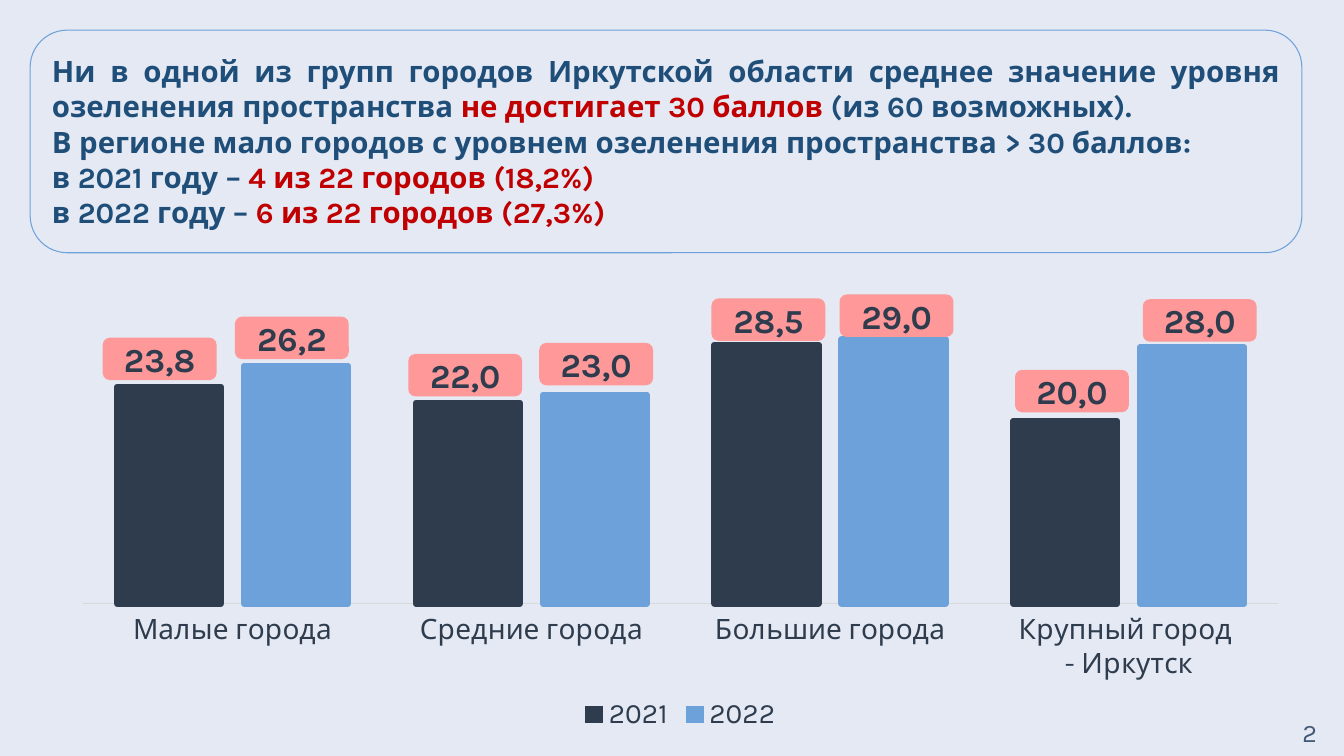
from dataclasses import dataclass

from lxml import etree
from pptx import Presentation
from pptx.chart.data import CategoryChartData
from pptx.dml.color import RGBColor
from pptx.enum.chart import XL_CHART_TYPE, XL_LEGEND_POSITION, XL_TICK_LABEL_POSITION, XL_TICK_MARK
from pptx.enum.shapes import MSO_SHAPE
from pptx.enum.text import MSO_ANCHOR, MSO_AUTO_SIZE, PP_ALIGN
from pptx.oxml.ns import qn
from pptx.util import Cm, Pt

COLUMNS = XL_CHART_TYPE.COLUMN_CLUSTERED
LEGEND_BOTTOM = XL_LEGEND_POSITION.BOTTOM
NO_TICK = XL_TICK_MARK.NONE
LABELS_LOW = XL_TICK_LABEL_POSITION.LOW
ROUNDED = MSO_SHAPE.ROUNDED_RECTANGLE
MIDDLE = MSO_ANCHOR.MIDDLE
FIXED_SIZE = MSO_AUTO_SIZE.NONE
CENTER, JUSTIFY = PP_ALIGN.CENTER, PP_ALIGN.JUSTIFY

FONT = "Karla"
BACKGROUND = RGBColor(0xE4, 0xE9, 0xF4)
DARK = RGBColor(0x2E, 0x3C, 0x4D)
BLUE = RGBColor(0x6D, 0xA1, 0xDA)
NAVY = RGBColor(0x1F, 0x4E, 0x79)
RED = RGBColor(0xC0, 0x00, 0x00)
PINK = RGBColor(0xFF, 0x99, 0x99)
AXIS_GREY = RGBColor(0xD9, 0xD9, 0xD9)
PAGE_GREY = RGBColor(0x43, 0x59, 0x76)


@dataclass(frozen=True)
class Run:
    text: str
    color: RGBColor


@dataclass(frozen=True)
class Series:
    name: str
    values: tuple[int, ...]
    color: RGBColor


@dataclass(frozen=True)
class Score:
    text: str
    left: float
    top: float


MESSAGE = [
    [Run("Ни в одной из групп городов Иркутской области среднее значение "
         "уровня озеленения пространства ", NAVY),
     Run("не достигает 30 баллов ", RED),
     Run("(из 60 возможных).", NAVY)],
    [Run("В регионе мало городов с уровнем озеленения пространства > 30 баллов:", NAVY)],
    [Run("в 2021 году – ", NAVY), Run("4 из 22 городов (18,2%)", RED)],
    [Run("в 2022 году – ", NAVY), Run("6 из 22 городов (27,3%)", RED)],
]
CITY_GROUPS = ["Малые города", "Средние города", "Большие города", "Крупный город \n- Иркутск"]
YEARS = [
    Series("2021", (82, 76, 98, 69), DARK),
    Series("2022", (90, 79, 100, 97), BLUE),
]
SCORES = [
    Score("23,8", 2.59, 8.51), Score("26,2", 5.92, 7.98),
    Score("22,0", 10.29, 8.92), Score("23,0", 13.59, 8.64),
    Score("28,5", 17.93, 7.52), Score("29,0", 21.16, 7.42),
    Score("20,0", 25.58, 9.32), Score("28,0", 28.8, 7.54),
]
MESSAGE_BOX = (Cm(0.76), Cm(0.76), Cm(32.05), Cm(5.61))


def set_font(font, size: float, color: RGBColor, bold: bool = False) -> None:
    font.name, font.size, font.bold = FONT, Pt(size), bold
    font.color.rgb = color


def write_text(sp, paragraphs: list[list[Run]], *, size: float, bold: bool = False,
               align: PP_ALIGN = CENTER, margin: float = 0) -> None:
    tf = sp.text_frame
    tf.word_wrap = True
    tf.auto_size = FIXED_SIZE
    tf.vertical_anchor = MIDDLE
    tf.margin_left = tf.margin_right = Cm(margin)
    tf.margin_top = tf.margin_bottom = 0
    for i, runs in enumerate(paragraphs):
        p = tf.add_paragraph() if i else tf.paragraphs[0]
        p.alignment = align
        for run in runs:
            r = p.add_run()
            r.text = run.text
            set_font(r.font, size, run.color, bold)


def add_message(s) -> None:
    frame = s.shapes.add_shape(ROUNDED, *MESSAGE_BOX)
    frame.shadow.inherit = False
    frame.fill.background()
    frame.line.color.rgb = BLUE
    frame.line.width = Pt(0.75)

    title = s.shapes.title
    title.left, title.top, title.width, title.height = MESSAGE_BOX
    write_text(title, MESSAGE, size=21, bold=True, align=JUSTIFY, margin=0.55)


def set_plot_area(chart, **fractions: float) -> None:
    """Fix the inner plot area as fractions of the chart size."""
    plot_area = chart.plots[0]._element.getparent()
    for old in plot_area.findall(qn("c:layout")):
        plot_area.remove(old)
    layout = etree.Element(qn("c:layout"))
    manual = etree.SubElement(layout, qn("c:manualLayout"))
    settings = {"layoutTarget": "inner", "xMode": "edge", "yMode": "edge", **fractions}
    for name, value in settings.items():
        etree.SubElement(manual, qn(f"c:{name}")).set("val", str(value))
    plot_area.insert(0, layout)


def add_city_chart(s) -> None:
    data = CategoryChartData(number_format="0")
    data.categories = CITY_GROUPS
    for year in YEARS:
        data.add_series(year.name, year.values)
    chart = s.shapes.add_chart(COLUMNS, Cm(1.47), Cm(6.99), Cm(31.37), Cm(11.58), data).chart
    set_font(chart.font, 18, DARK)
    chart.has_title = False
    chart.has_legend = True
    chart.legend.position = LEGEND_BOTTOM
    chart.legend.include_in_layout = False
    set_font(chart.legend.font, 20, DARK)

    plot = chart.plots[0]
    plot.gap_width, plot.overlap = 65, -22
    plot.vary_by_categories = False
    for series, year in zip(plot.series, YEARS):
        series.format.fill.solid()
        series.format.fill.fore_color.rgb = year.color
        series.format.line.color.rgb = year.color
        series.format.line.width = Pt(4.5)

    groups = chart.category_axis
    groups.major_tick_mark = groups.minor_tick_mark = NO_TICK
    groups.tick_label_position = LABELS_LOW
    groups.format.line.color.rgb = AXIS_GREY
    groups.format.line.width = Pt(0.75)
    set_font(groups.tick_labels.font, 20, DARK)

    values = chart.value_axis
    values.minimum_scale, values.maximum_scale = 0, 120
    values.has_major_gridlines = False
    values.visible = False
    set_plot_area(chart, x=0.02, y=0.02, w=0.96, h=0.69)


def add_score(s, score: Score) -> None:
    sp = s.shapes.add_shape(ROUNDED, Cm(score.left), Cm(score.top), Cm(2.87), Cm(1.07))
    sp.shadow.inherit = False
    sp.fill.solid()
    sp.fill.fore_color.rgb = PINK
    sp.line.fill.background()
    write_text(sp, [[Run(score.text, DARK)]], size=24, bold=True)


def add_page_number(s) -> None:
    sp = s.shapes.add_textbox(Cm(32.46), Cm(17.96), Cm(1.09), Cm(0.97))
    write_text(sp, [[Run("2", PAGE_GREY)]], size=18)


def main() -> None:
    prs = Presentation()
    prs.slide_width, prs.slide_height = Cm(33.87), Cm(19.05)
    s = prs.slides.add_slide(prs.slide_layouts.get_by_name("Title Only"))
    s.background.fill.solid()
    s.background.fill.fore_color.rgb = BACKGROUND
    add_city_chart(s)
    add_message(s)
    for score in SCORES:
        add_score(s, score)
    add_page_number(s)
    prs.save("out.pptx")


if __name__ == "__main__":
    main()
